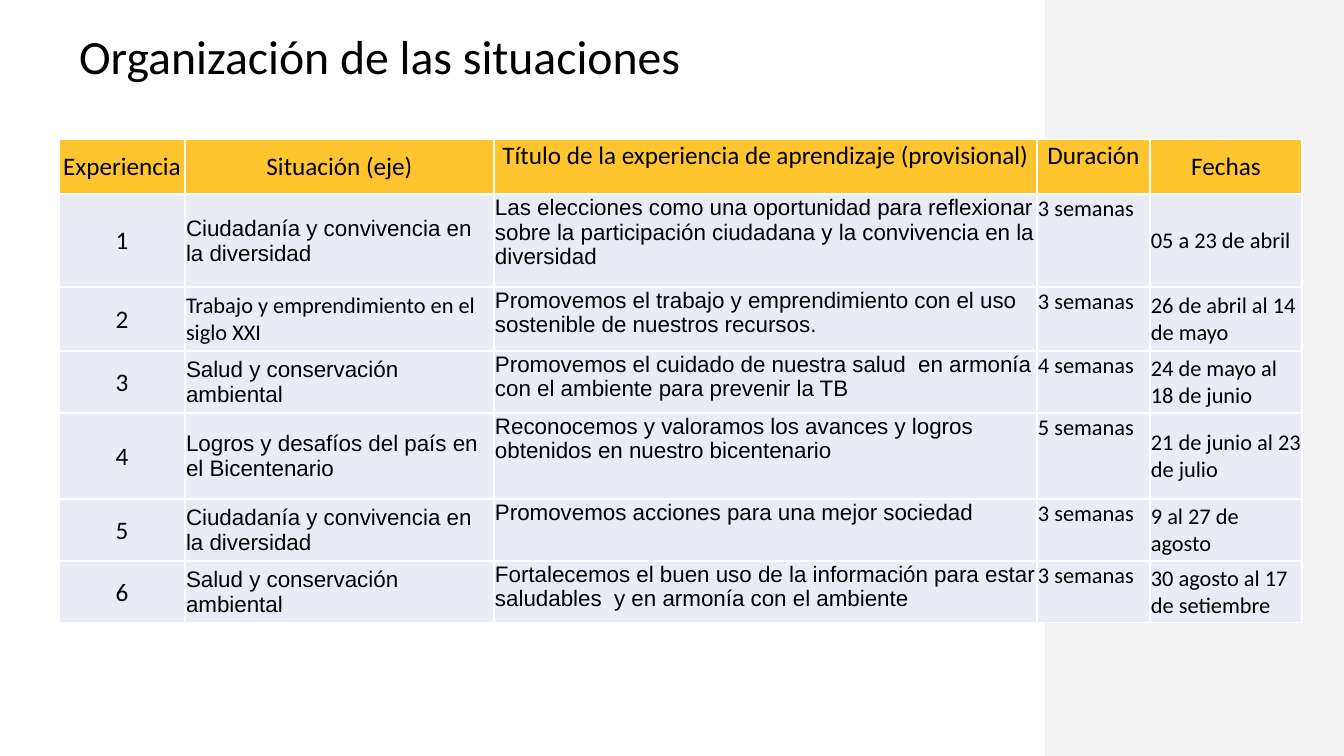
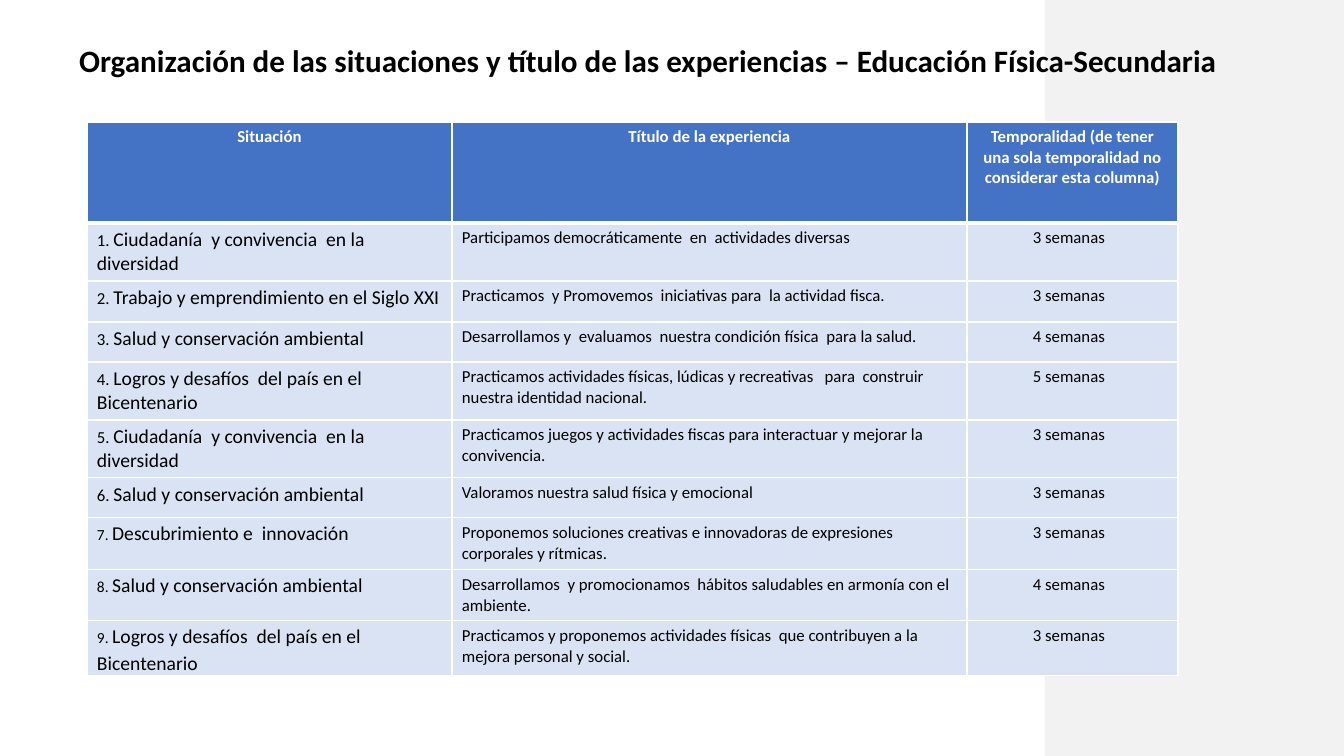
import dataclasses

import lxml.etree
import pptx
import pptx.dml.color
import pptx.enum.shapes
import pptx.enum.text
import pptx.oxml.ns
import pptx.util

SLIDE_WIDTH, SLIDE_HEIGHT = 1344, 756
BAND_LEFT = 1045
EMU_PER_PX = 914400 / 100.8

BLACK = pptx.dml.color.RGBColor(0x00, 0x00, 0x00)
WHITE = pptx.dml.color.RGBColor(0xFF, 0xFF, 0xFF)
BAND_GRAY = pptx.dml.color.RGBColor(0xF2, 0xF2, 0xF2)
HEADER_YELLOW = pptx.dml.color.RGBColor(0xFF, 0xC5, 0x2F)
HEADER_BLUE = pptx.dml.color.RGBColor(0x44, 0x72, 0xC4)
BODY_LAVENDER = pptx.dml.color.RGBColor(0xE9, 0xEB, 0xF5)
BODY_BLUE = pptx.dml.color.RGBColor(0xDA, 0xE3, 0xF3)

LEFT = pptx.enum.text.PP_ALIGN.LEFT
CENTER = pptx.enum.text.PP_ALIGN.CENTER
TOP = pptx.enum.text.MSO_ANCHOR.TOP
MIDDLE = pptx.enum.text.MSO_ANCHOR.MIDDLE

TIGHT_INSETS = (1, 1, 1, 0)
NORMAL_INSETS = (10, 5, 10, 5)
SIDE_INSETS = (10, 0, 10, 0)
WEEKS_INSETS = (10, 5, 17, 5)

SCHEDULE_HEADERS = [
    ("Experiencia", MIDDLE),
    ("Situación (eje)", MIDDLE),
    ("Título de la experiencia de aprendizaje (provisional)", TOP),
    ("Duración", TOP),
    ("Fechas", MIDDLE),
]
SCHEDULE = [
    ("Ciudadanía y convivencia en la diversidad", "Arial",
     "Las elecciones como una oportunidad para reflexionar sobre la participación "
     "ciudadana y la convivencia en la diversidad", 3, "05 a 23 de abril"),
    ("Trabajo y emprendimiento en el siglo XXI", "Calibri",
     "Promovemos el trabajo y emprendimiento con el uso sostenible de nuestros recursos.",
     3, "26 de abril al 14 de mayo"),
    ("Salud y conservación ambiental", "Arial",
     "Promovemos el cuidado de nuestra salud  en armonía con el ambiente para prevenir la TB",
     4, "24 de mayo al 18 de junio"),
    ("Logros y desafíos del país en el Bicentenario", "Arial",
     "Reconocemos y valoramos los avances y logros obtenidos en nuestro bicentenario",
     5, "21 de junio al 23 de julio"),
    ("Ciudadanía y convivencia en la diversidad", "Arial",
     "Promovemos acciones para una mejor sociedad", 3, "9 al 27 de agosto"),
    ("Salud y conservación ambiental", "Arial",
     "Fortalecemos el buen uso de la información para estar saludables  y en armonía "
     "con el ambiente", 3, "30 agosto al 17 de setiembre"),
]

EXPERIENCE_HEADERS = [
    "Situación",
    "Título de la experiencia",
    "Temporalidad (de tener una sola temporalidad no considerar esta columna)",
]
EXPERIENCES = [
    ("Ciudadanía  y convivencia  en la diversidad",
     "Participamos democráticamente  en  actividades diversas", 3),
    ("Trabajo y emprendimiento en el Siglo XXI",
     "Practicamos  y Promovemos  iniciativas para  la actividad fisca.", 3),
    ("Salud y conservación ambiental",
     "Desarrollamos y  evaluamos  nuestra condición física  para la salud.", 4),
    ("Logros y desafíos  del país en el Bicentenario",
     "Practicamos actividades físicas, lúdicas y recreativas   para  construir "
     "nuestra identidad nacional.", 5),
    ("Ciudadanía  y convivencia  en la diversidad",
     "Practicamos juegos y actividades fiscas para interactuar y mejorar la convivencia.", 3),
    ("Salud y conservación ambiental", "Valoramos nuestra salud física y emocional", 3),
    ("Descubrimiento e  innovación",
     "Proponemos soluciones creativas e innovadoras de expresiones  corporales y rítmicas.", 3),
    ("Salud y conservación ambiental",
     "Desarrollamos  y promocionamos  hábitos saludables en armonía con el ambiente.", 4),
    ("Logros y desafíos  del país en el Bicentenario",
     "Practicamos y proponemos actividades físicas  que contribuyen a la mejora "
     "personal y social.", 3),
]
FIRST_SPACED_EXPERIENCE = 7


@dataclasses.dataclass
class Run:
    text: str
    size: float
    font: str = "Calibri"
    color: pptx.dml.color.RGBColor = BLACK
    bold: bool = False


@dataclasses.dataclass
class Cell:
    runs: list
    fill: pptx.dml.color.RGBColor
    align: pptx.enum.text.PP_ALIGN = LEFT
    anchor: pptx.enum.text.MSO_ANCHOR = TOP
    insets: tuple = NORMAL_INSETS
    line_spacing: float = 1.0
    space_after: int = 0


def px(length):
    return pptx.util.Emu(round(length * EMU_PER_PX))


def add_runs(paragraph, runs):
    for item in runs:
        run = paragraph.add_run()
        run.text = item.text
        run.font.size = pptx.util.Pt(item.size)
        run.font.name = item.font
        run.font.bold = item.bold
        run.font.color.rgb = item.color


def add_band(slide):
    band = slide.shapes.add_shape(
        pptx.enum.shapes.MSO_SHAPE.RECTANGLE,
        px(BAND_LEFT), 0, px(SLIDE_WIDTH - BAND_LEFT), px(SLIDE_HEIGHT))
    band.shadow.inherit = False
    band.fill.solid()
    band.fill.fore_color.rgb = BAND_GRAY
    band.line.fill.background()
    slide.shapes.title.element.addprevious(band.element)


def add_titled_slide(presentation, title, line_spacing):
    slide = presentation.slides.add_slide(presentation.slide_layouts[5])
    add_band(slide)
    shape = slide.shapes.title
    shape.left, shape.top, shape.width, shape.height = px(69), px(36), px(1160), px(53)
    frame = shape.text_frame
    frame.word_wrap = True
    frame.auto_size = pptx.enum.text.MSO_AUTO_SIZE.NONE
    frame.vertical_anchor = MIDDLE
    paragraph = frame.paragraphs[0]
    paragraph.alignment = LEFT
    paragraph.line_spacing = line_spacing
    add_runs(paragraph, [title])
    return slide


def set_borders(cell, top, bottom):
    properties = cell._tc.get_or_add_tcPr()
    for position, (side, points) in enumerate([("L", 1), ("R", 1), ("T", top), ("B", bottom)]):
        line = lxml.etree.Element(
            pptx.oxml.ns.qn(f"a:ln{side}"), w=str(pptx.util.Pt(points)))
        fill = lxml.etree.SubElement(line, pptx.oxml.ns.qn("a:solidFill"))
        lxml.etree.SubElement(fill, pptx.oxml.ns.qn("a:srgbClr"), val=str(WHITE))
        properties.insert(position, line)


def fill_cell(cell, content):
    cell.fill.solid()
    cell.fill.fore_color.rgb = content.fill
    cell.vertical_anchor = content.anchor
    cell.margin_left, cell.margin_top, cell.margin_right, cell.margin_bottom = map(
        px, content.insets)
    paragraph = cell.text_frame.paragraphs[0]
    paragraph.alignment = content.align
    paragraph.line_spacing = content.line_spacing
    paragraph.space_after = pptx.util.Pt(content.space_after)
    add_runs(paragraph, content.runs)


def add_grid(slide, left, top, widths, heights, rows, header_rule):
    table = slide.shapes.add_table(
        len(heights), len(widths), px(left), px(top), px(sum(widths)), px(sum(heights))).table
    table.horz_banding = False
    for column, width in zip(table.columns, widths):
        column.width = px(width)
    for index, (height, contents) in enumerate(zip(heights, rows)):
        table.rows[index].height = px(height)
        for cell, content in zip(table.rows[index].cells, contents):
            fill_cell(cell, content)
            set_borders(cell, header_rule if index == 1 else 1, header_rule if index == 0 else 1)


def schedule_rows():
    def body(text, size=16, font="Calibri", align=LEFT, anchor=MIDDLE):
        return Cell([Run(text, size, font)], BODY_LAVENDER, align, anchor, TIGHT_INSETS)

    rows = [[Cell([Run(text, 18)], HEADER_YELLOW, CENTER, anchor, TIGHT_INSETS)
             for text, anchor in SCHEDULE_HEADERS]]
    for number, (situation, font, title, weeks, dates) in enumerate(SCHEDULE, 1):
        rows.append([
            body(str(number), size=18, align=CENTER),
            body(situation, font=font),
            body(title, font="Arial", anchor=TOP),
            body(f"{weeks} semanas", anchor=TOP),
            body(dates),
        ])
    return rows


def experience_rows():
    rows = [[Cell([Run(text, 12, color=WHITE, bold=True)], HEADER_BLUE, CENTER)
             for text in EXPERIENCE_HEADERS]]
    for number, (situation, title, weeks) in enumerate(EXPERIENCES, 1):
        spaced = number >= FIRST_SPACED_EXPERIENCE
        runs = [Run(f"{number}. ", 11 if spaced else 12), Run(situation, 14)]
        if spaced:
            first = Cell(runs, BODY_BLUE, insets=SIDE_INSETS, line_spacing=1.15, space_after=10)
        else:
            first = Cell(runs, BODY_BLUE)
        rows.append([
            first,
            Cell([Run(title, 12)], BODY_BLUE),
            Cell([Run(f"{weeks} semanas", 12)], BODY_BLUE, CENTER, insets=WEEKS_INSETS),
        ])
    return rows


def add_schedule_slide(presentation):
    slide = add_titled_slide(presentation, Run("Organización de las situaciones", 34.1), 0.7)
    add_grid(slide, 59, 139, [126, 309, 543, 113, 152], [55, 93, 64, 62, 86, 62, 62],
             schedule_rows(), header_rule=1)


def add_experiences_slide(presentation):
    title = Run("Organización de las situaciones y título de las experiencias – "
                "Educación Física-Secundaria", 22.2, bold=True)
    slide = add_titled_slide(presentation, title, 0.9)
    add_grid(slide, 87, 122, [365, 515, 211], [101, 58, 41, 40, 58, 58, 40, 52, 51, 55],
             experience_rows(), header_rule=3)


def main():
    presentation = pptx.Presentation()
    presentation.slide_width = px(SLIDE_WIDTH)
    presentation.slide_height = px(SLIDE_HEIGHT)
    add_schedule_slide(presentation)
    add_experiences_slide(presentation)
    presentation.save("out.pptx")


if __name__ == "__main__":
    main()
